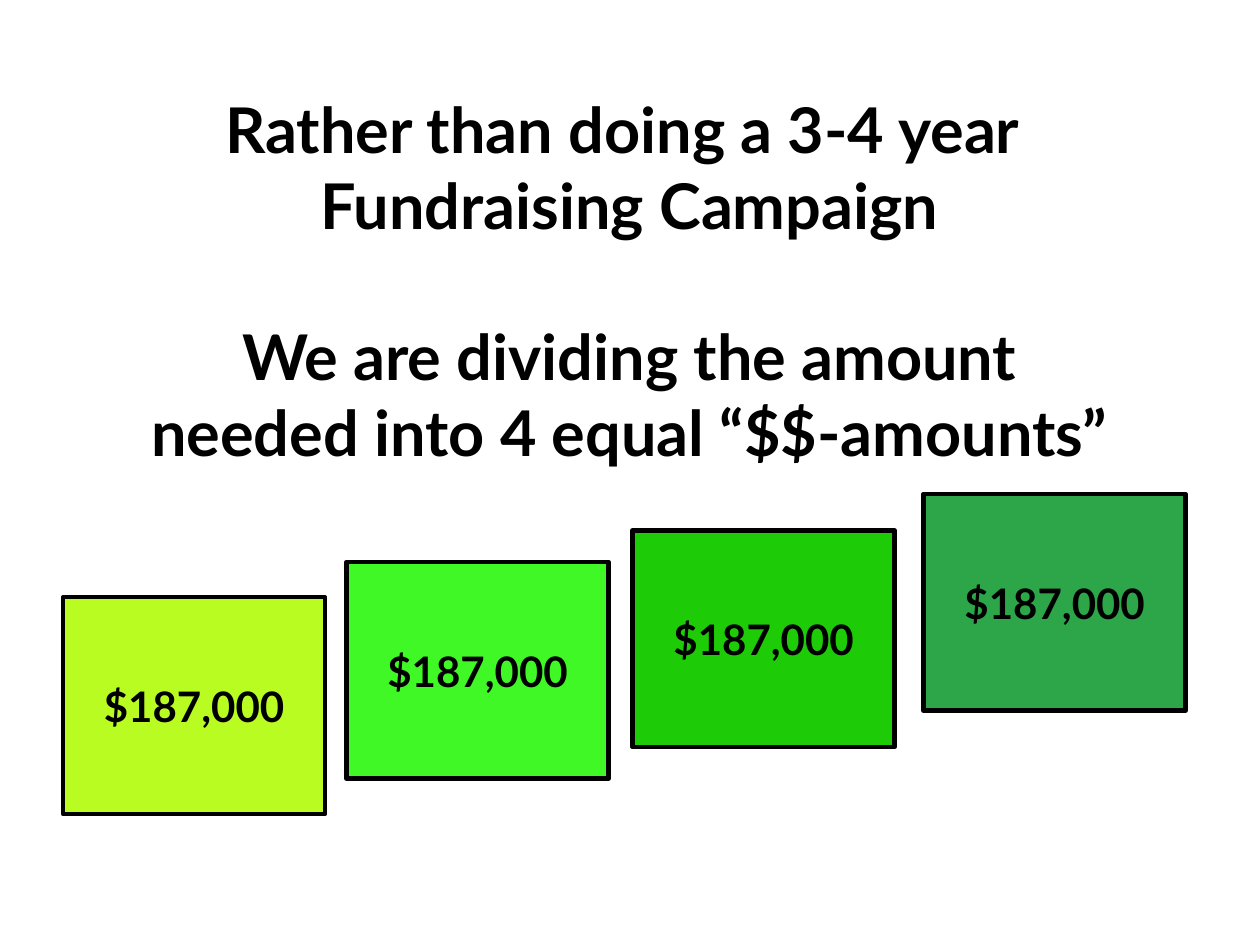
from dataclasses import dataclass

from pptx import Presentation
from pptx.dml.color import RGBColor
from pptx.enum.shapes import MSO_SHAPE
from pptx.enum.text import MSO_ANCHOR, MSO_AUTO_SIZE, PP_ALIGN
from pptx.util import Inches, Pt


@dataclass(frozen=True)
class Theme:
    font: str = "Lato"
    ink: str = "000000"
    greens: tuple = ("B9FC22", "3FF826", "1ECB07", "2CA649")
    head: int = 36
    label: int = 24
    line: float = 2.5
    gap: float = 43.2  # one line of heading text


class Board:
    def __init__(self, slide, theme):
        self.slide = slide
        self.theme = theme

    def words(self, frame, lines, size, anchor):
        """Fill a text frame with centred bold lines."""
        form = {"word_wrap": True, "auto_size": MSO_AUTO_SIZE.NONE,
                "vertical_anchor": anchor}
        for name, value in form.items():
            setattr(frame, name, value)
        frame.text = "\n".join(lines)
        style = {"name": self.theme.font, "size": Pt(size), "bold": True}
        for para in frame.paragraphs:
            para.alignment = PP_ALIGN.CENTER
            for run in para.runs:
                for name, value in style.items():
                    setattr(run.font, name, value)
                run.font.color.rgb = RGBColor.from_string(self.theme.ink)

    def title(self, lines, left, top, width, height):
        shape = self.slide.shapes.title
        place = {"left": left, "top": top, "width": width, "height": height}
        for name, value in place.items():
            setattr(shape, name, Inches(value))
        self.words(shape.text_frame, lines, self.theme.head, MSO_ANCHOR.TOP)
        shape.text_frame.paragraphs[-1].space_before = Pt(self.theme.gap)

    def box(self, text, fill, left, top, width, height):
        area = [Inches(n) for n in (left, top, width, height)]
        shape = self.slide.shapes.add_shape(MSO_SHAPE.RECTANGLE, *area)
        shape.shadow.inherit = False
        shape.fill.solid()
        shape.fill.fore_color.rgb = RGBColor.from_string(fill)
        shape.line.color.rgb = RGBColor.from_string(self.theme.ink)
        shape.line.width = Pt(self.theme.line)
        self.words(shape.text_frame, [text], self.theme.label,
                   MSO_ANCHOR.MIDDLE)


def main():
    deck = Presentation()
    deck.slide_width, deck.slide_height = Inches(10), Inches(7.5)
    theme = Theme()
    board = Board(deck.slides.add_slide(deck.slide_layouts[5]), theme)

    # Heading
    board.title(["Rather than doing a 3-4 year ", "Fundraising Campaign",
                 "We are dividing the amount needed into 4 equal “$$-amounts”"],
                1.08, 0.67, 7.83, 4.21)

    # Four equal amounts, rising to the right
    spots = [(0.5, 4.74), (2.75, 4.46), (5.02, 4.21), (7.33, 3.92)]
    for fill, (left, top) in zip(theme.greens, spots):
        board.box("$187,000", fill, left, top, 2.08, 1.72)

    deck.save("out.pptx")


if __name__ == "__main__":
    main()
